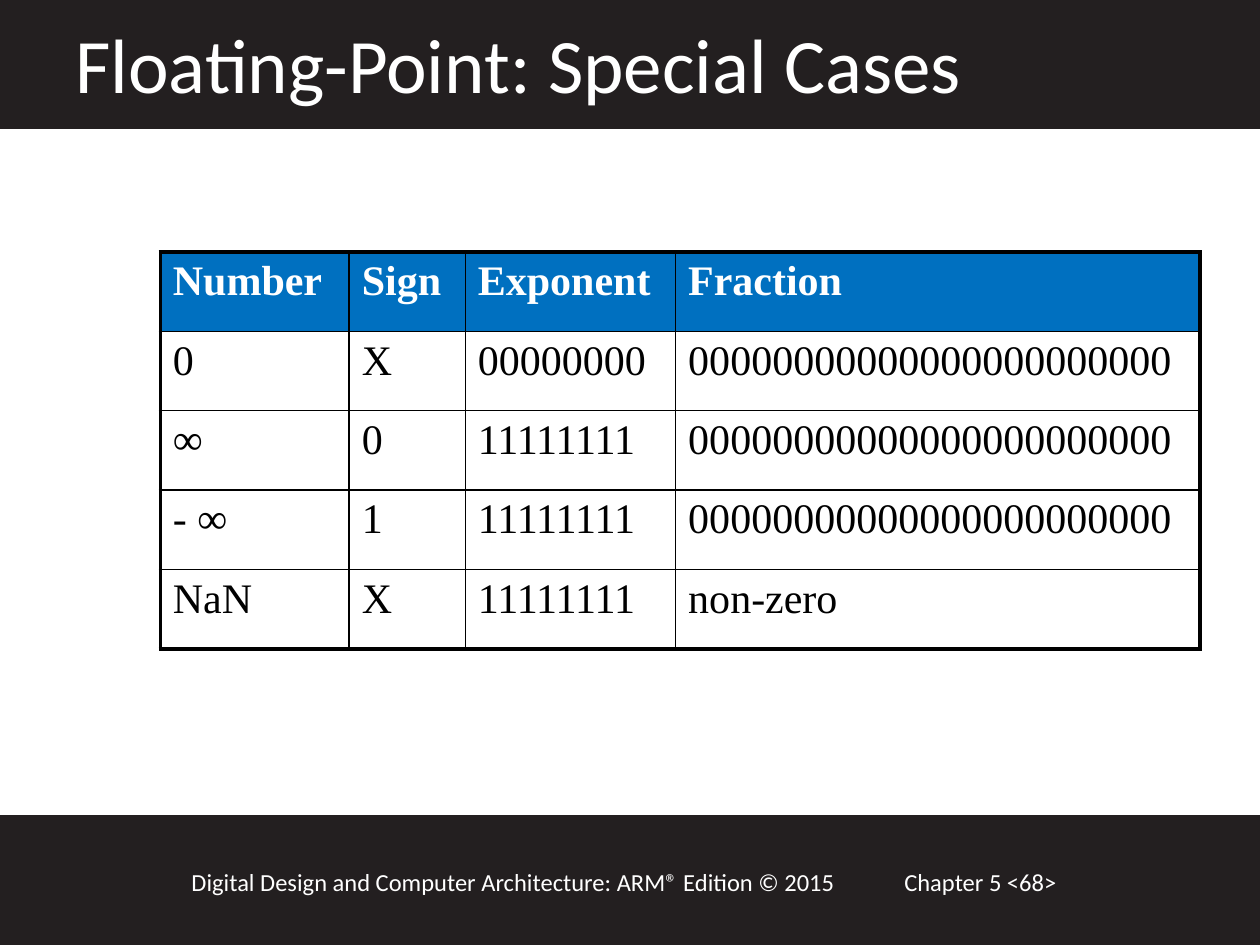
from lxml import etree
from pptx import Presentation
from pptx import util as u
from pptx.dml import color
from pptx.enum import shapes, text
from pptx.oxml import ns

BLACK, WHITE, DARK, BLUE = "000000", "FFFFFF", "231F20", "0070C0"


def rgb(value):
    return color.RGBColor.from_string(value)


class Deck:
    """Holds the style and the current slide, and adds elements to it."""

    def __init__(self, prs):
        self.sans, self.serif = "Calibri", "Times New Roman"
        self.thin, self.thick = 1, 2.25
        self.s = prs.slides.add_slide(prs.slide_layouts[6])

    def format(self, p, font, size, colour, bold=False):
        for r in p.runs:
            r.font.name, r.font.size, r.font.bold = font, u.Pt(size), bold
            r.font.color.rgb = rgb(colour)

    def bar(self, top, height):
        sp = self.s.shapes.add_shape(shapes.MSO_SHAPE.RECTANGLE, 0, u.Cm(top), u.Cm(25.4), u.Cm(height))
        sp.shadow.inherit = False
        sp.fill.solid()
        sp.fill.fore_color.rgb = rgb(DARK)
        sp.line.color.rgb = rgb(DARK)
        sp.line.width = u.Pt(2)

    def text(self, content, left, top, width, height, size):
        sp = self.s.shapes.add_textbox(u.Cm(left), u.Cm(top), u.Cm(width), u.Cm(height))
        tf = sp.text_frame
        tf.word_wrap = True
        tf.auto_size = text.MSO_AUTO_SIZE.SHAPE_TO_FIT_TEXT
        tf.text = content
        self.format(tf.paragraphs[0], self.sans, size, WHITE)

    def border(self, cell, side, width):
        ln = etree.SubElement(cell._tc.get_or_add_tcPr(), ns.qn(f"a:ln{side}"), w=str(u.Pt(width)))
        fill = etree.SubElement(ln, ns.qn("a:solidFill"))
        etree.SubElement(fill, ns.qn("a:srgbClr"), val=BLACK)

    def table(self, rows, left, top, widths, height):
        last_row, last_col = len(rows) - 1, len(widths) - 1
        table = self.s.shapes.add_table(len(rows), len(widths), u.Cm(left), u.Cm(top),
                                        u.Cm(sum(widths)), u.Cm(height * len(rows))).table
        for col, width in zip(table.columns, widths):
            col.width = u.Cm(width)
        for i, row in enumerate(rows):
            table.rows[i].height = u.Cm(height)
            for j, content in enumerate(row):
                cell = table.cell(i, j)
                outer = {"L": j == 0, "R": j == last_col, "T": i == 0, "B": i == last_row}
                for side, edge in outer.items():
                    self.border(cell, side, self.thick if edge else self.thin)
                header = i == 0
                if header:
                    cell.fill.solid()
                    cell.fill.fore_color.rgb = rgb(BLUE)
                else:
                    cell.fill.background()
                cell.text_frame.text = content
                self.format(cell.text_frame.paragraphs[0], self.serif, 24,
                            WHITE if header else BLACK, header)


def main():
    prs = Presentation()
    prs.slide_width, prs.slide_height = u.Cm(25.4), u.Cm(19.05)
    deck = Deck(prs)
    deck.bar(16.46, 2.59)
    deck.bar(0, 2.57)
    deck.text("Chapter 5 <68>", 17.98, 17.35, 5.51, 0.86, 14)
    deck.text("Digital Design and Computer Architecture: ARM® Edition © 2015", 3.61, 17.35, 14.6, 0.86, 14)
    zeros, ones = "0" * 23, "1" * 8
    rows = [
        ("Number", "Sign", "Exponent", "Fraction"),
        ("0", "X", "0" * 8, zeros),
        ("∞", "0", ones, zeros),
        ("- ∞", "1", ones, zeros),
        ("NaN", "X", ones, "non-zero"),
    ]
    deck.table(rows, 3.23, 5.08, (3.81, 2.34, 4.24, 10.57), 1.6)
    deck.text("Floating-Point: Special Cases", 1.27, 0.2, 22.02, 2.13, 44)
    prs.save("out.pptx")


if __name__ == "__main__":
    main()
